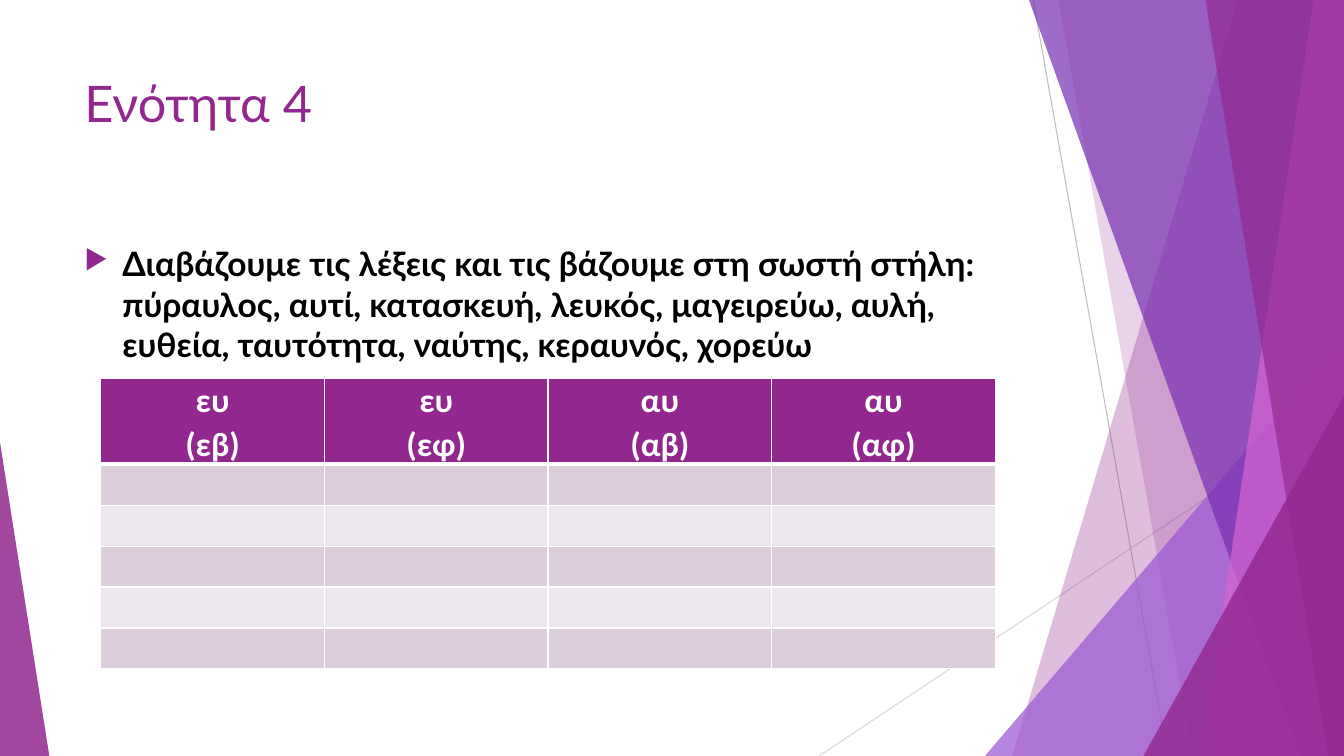
from lxml import etree
from pptx import Presentation, util as u
from pptx.dml.color import RGBColor
from pptx.enum import shapes, text
from pptx.oxml.ns import qn

PX = 9525  # EMU in one px, 96 px to the inch
WIDE, HIGH = 1280, 720
PLUM, WHITE = "92278F", "FFFFFF"
BANDS = ["DCCDDB", "EEE8EE"]
HEADS = [("ευ", "(εβ)"), ("ευ", "(εφ)"), ("αυ", "(αβ)"), ("αυ", "(αφ)")]
TASK = ("Διαβάζουμε τις λέξεις και τις βάζουμε στη σωστή στήλη: "
        "πύραυλος, αυτί, κατασκευή, λευκός, μαγειρεύω, αυλή, "
        "ευθεία, ταυτότητα, ναύτης, κεραυνός, χορεύω")


def px(*vals):
    return [u.Emu(v * PX) for v in vals]


def hue(code):
    return RGBColor.from_string(code)


def add(node, tag, **attrs):
    return etree.SubElement(node, qn(tag), attrs)


def tint(shape, code, alpha):
    """Fill a shape with a see-through colour and no outline."""
    shape.shadow.inherit = False
    shape.line.fill.background()
    shape.fill.solid()
    shape.fill.fore_color.rgb = hue(code)
    mark = next(shape.fill._xPr.iter(qn("a:srgbClr")))
    add(mark, "a:alpha", val=str(alpha * 1000))


def line(slide, ends, code):
    rule = slide.shapes.add_connector(shapes.MSO_CONNECTOR.STRAIGHT, *px(*ends))
    rule.line.color.rgb = hue(code)
    rule.line.width = u.Pt(0.75)
    add(rule._element.spPr, "a:effectLst")


def shard(slide, top, foot, code, alpha):
    """Draw a slanted panel that reaches the right edge."""
    form = slide.shapes.build_freeform(top, 0, scale=PX)
    form.add_line_segments([(WIDE, 0), (WIDE, HIGH), (foot, HIGH)], close=True)
    tint(form.convert_to_shape(), code, alpha)


def wedge(slide, left, top, wide, tip, code, alpha):
    """Draw a triangle that stands on the bottom edge."""
    kind = shapes.MSO_SHAPE.ISOSCELES_TRIANGLE
    shape = slide.shapes.add_shape(kind, *px(left, top, wide, HIGH - top))
    shape.adjustments[0] = tip
    tint(shape, code, alpha)


def write(para, words, font, size, code, bold=False):
    run = para.add_run()
    run.text = words
    run.font.name = font
    run.font.size = u.Pt(size)
    run.font.bold = bold
    run.font.color.rgb = hue(code)


def label(slide, box):
    """Add an empty wrapped text box and return its first paragraph."""
    frame = slide.shapes.add_textbox(*px(*box)).text_frame
    frame.word_wrap = True
    return frame.paragraphs[0]


def bullet(para, inset):
    props = para._p.get_or_add_pPr()
    props.set("marL", str(inset * PX))
    props.set("indent", str(-inset * PX))
    add(add(props, "a:buClr"), "a:srgbClr", val=PLUM)
    add(props, "a:buSzPct", val="80000")
    add(props, "a:buChar", char="▶")


def edge(cell, foot):
    """Give a cell white borders, with the bottom one foot points wide."""
    props = cell._tc.get_or_add_tcPr()
    for spot, side in enumerate("LRTB"):
        wide = foot if side == "B" else 1
        rim = etree.Element(qn("a:ln" + side), w=str(u.Pt(wide)))
        add(add(rim, "a:solidFill"), "a:srgbClr", val=WHITE)
        props.insert(spot, rim)


def head(cell, words):
    cell.margin_left = cell.margin_right = px(7)[0]
    cell.margin_top = cell.margin_bottom = 0
    frame = cell.text_frame
    for spot, word in enumerate(words):
        para = frame.add_paragraph() if spot else frame.paragraphs[0]
        para.alignment = text.PP_ALIGN.CENTER
        para.line_spacing = 1.07
        write(para, word, "Calibri", 24, WHITE, True)


def grid(slide, left, top, wide, tall, step, rows):
    """Add the table: a tall head row over banded empty rows."""
    cols = len(HEADS)
    size = px(left, top, wide * cols, tall + step * rows)
    table = slide.shapes.add_table(rows + 1, cols, *size).table
    for col in table.columns:
        col.width = px(wide)[0]
    for spot, row in enumerate(table.rows):
        row.height = px(step if spot else tall)[0]
        for cell, words in zip(row.cells, HEADS):
            cell.fill.solid()
            cell.fill.fore_color.rgb = hue(BANDS[(spot - 1) % 2] if spot else PLUM)
            edge(cell, 1 if spot else 3)
            if not spot:
                head(cell, words)


def decor(slide):
    line(slide, (984, 0, 1112, HIGH), "BFBFBF")
    line(slide, (WIDE, 387, 780, HIGH), "D9D9D9")
    shard(slide, 1179, 964, PLUM, 30)
    shard(slide, 1008, 1136, PLUM, 20)
    wedge(slide, 938, 320, 342, 1, "9B57D3", 72)
    shard(slide, 980, 1239, "762EB1", 70)
    shard(slide, 1251, 1144, "D665D3", 70)
    shard(slide, 1148, 1265, PLUM, 65)
    wedge(slide, 1089, 377, 191, 1, PLUM, 80)
    wedge(slide, 0, 421, 47, 0, PLUM, 85)


def main():
    deck = Presentation()
    deck.slide_width, deck.slide_height = px(WIDE, HIGH)
    slide = deck.slides.add_slide(deck.slide_layouts[6])
    decor(slide)
    write(label(slide, (71, 64, 902, 138)), "Ενότητα 4", "Lato", 36, PLUM)
    task = label(slide, (71, 227, 902, 407))
    bullet(task, 36)
    write(task, TASK, "Lato", 24, "000000", True)
    grid(slide, left=96, top=360, wide=213, tall=80, step=39, rows=5)
    deck.save("out.pptx")


if __name__ == "__main__":
    main()
